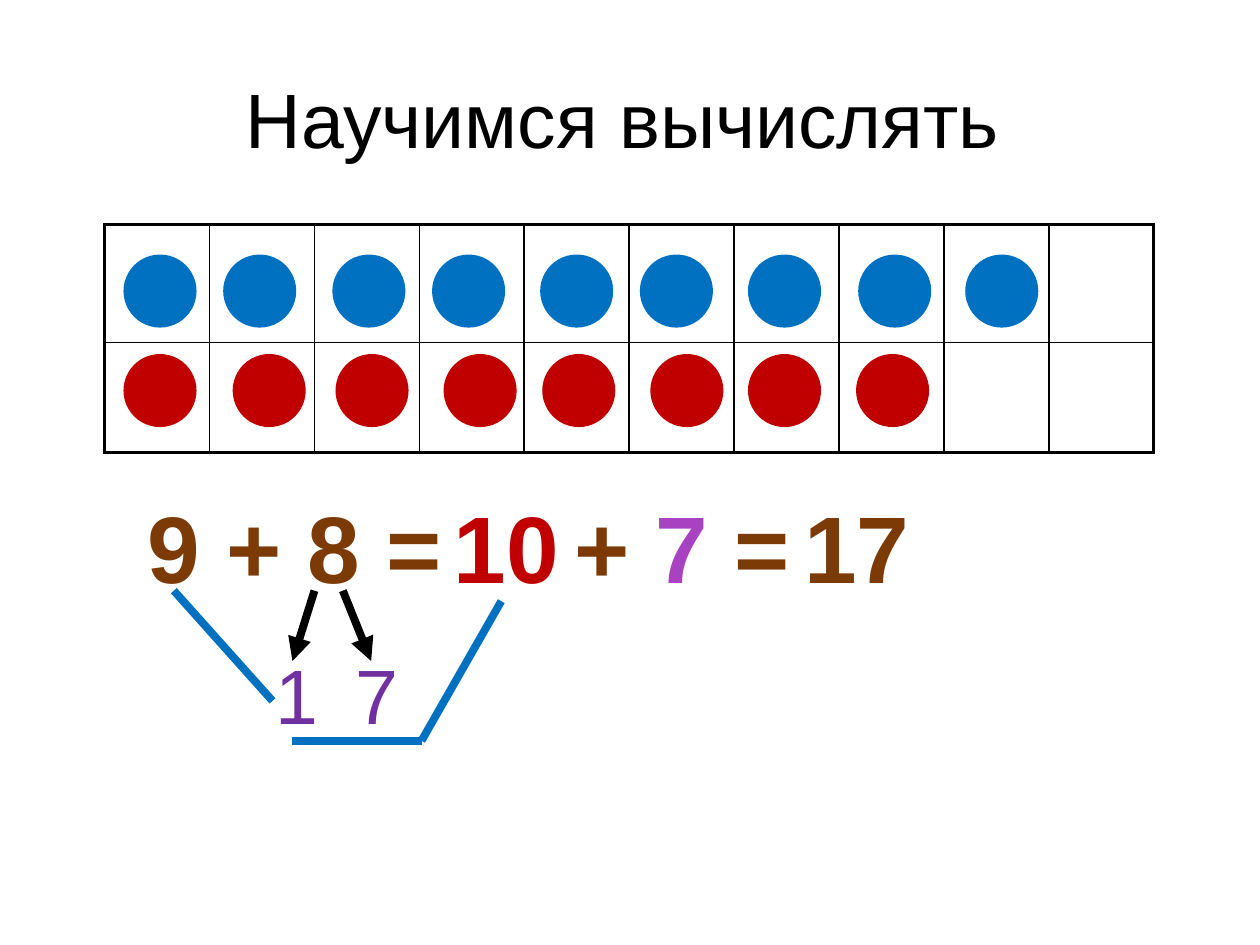
from lxml.etree import SubElement
from pptx import Presentation
from pptx.dml.color import RGBColor
from pptx.enum.shapes import MSO_CONNECTOR as CONN, MSO_SHAPE as SHAPE
from pptx.enum.text import MSO_ANCHOR as ANCHOR, PP_ALIGN as ALIGN
from pptx.oxml.ns import qn
from pptx.util import Inches, Pt

COLS = 10
BLACK, BLUE, RED = "000000", "0070C0", "C00000"
BROWN, VIOLET, PURPLE = "7C3B06", "A942C1", "7030A0"
BIG = {"name": "Arial", "size": Pt(54), "bold": True}
PLAIN = {"name": "Arial", "size": Pt(44), "bold": False}


def rgb(value):
    """Turn a hex string into a colour."""
    return RGBColor.from_string(value)


def write(sp, runs, fmt, align):
    """Put coloured runs into the first paragraph of a shape."""
    tf = sp.text_frame
    tf.vertical_anchor = ANCHOR.TOP
    p = tf.paragraphs[0]
    p.alignment = align
    for text, color in runs:
        r = p.add_run()
        r.text = text
        for key, value in fmt.items():
            setattr(r.font, key, value)
        r.font.color.rgb = rgb(color)


def add_line(s, start, end, color, arrow=False):
    """Draw a thick straight line, with an arrowhead at its end if asked."""
    sp = s.shapes.add_connector(CONN.STRAIGHT, *map(Inches, start + end))
    sp.line.color.rgb = rgb(color)
    sp.line.width = Pt(4.5)
    if arrow:
        SubElement(sp.line._get_or_add_ln(), qn("a:tailEnd"), type="triangle")
    SubElement(sp._element.spPr, qn("a:effectLst"))


def add_border(cell, side, width):
    """Give one side of a cell a black border."""
    ln = SubElement(cell._tc.get_or_add_tcPr(), qn(f"a:{side}"), w=str(Pt(width)))
    SubElement(SubElement(ln, qn("a:solidFill")), qn("a:srgbClr"), val=BLACK)


def add_title(s, box):
    """Place the slide title."""
    sp = s.shapes.title
    sp.left, sp.top, sp.width, sp.height = map(Inches, box)
    write(sp, [("Научимся вычислять", BLACK)], PLAIN, ALIGN.LEFT)


def add_frame(s, box, heights):
    """Draw the empty counting frame with a heavy outer border."""
    rows = len(heights)
    table = s.shapes.add_table(rows, COLS, *map(Inches, box)).table
    table.first_row = table.horz_banding = False
    for row, height in zip(table.rows, heights):
        row.height = Inches(height)
    for i in range(rows):
        for j in range(COLS):
            cell = table.cell(i, j)
            outer = {"lnL": j == 0, "lnR": j == COLS - 1,
                     "lnT": i == 0, "lnB": i == rows - 1}
            for side, heavy in outer.items():
                add_border(cell, side, 2.25 if heavy else 1)
            cell.fill.background()


def add_counters(s, box, columns, color):
    """Lay round counters along one row of the frame."""
    left, top, width, height = box
    unit = width / COLS
    for col in columns:
        sp = s.shapes.add_shape(SHAPE.OVAL, Inches(left + col * unit), Inches(top),
                                Inches(height), Inches(height))
        sp.shadow.inherit = False
        sp.fill.solid()
        sp.fill.fore_color.rgb = rgb(color)
        sp.line.fill.background()


def add_equation(s, box):
    """Write the sum and show how its second term is split."""
    left, top, width, _ = box
    unit = width / COLS

    def place(col, row):
        return left + col * unit, top + row * unit

    terms = [
        (0.28, 0, 3.07, 1.21, [("9 + 8 =", BROWN)], BIG, ALIGN.CENTER),
        (3.2, 0, 1.25, 1.21, [("10", RED)], BIG, ALIGN.CENTER),
        (4.34, 0, 2.32, 1.21, [("+ ", BROWN), ("7 ", VIOLET), ("=", BROWN)], BIG, ALIGN.CENTER),
        (6.54, 0, 1.25, 1.21, [("17", BROWN)], BIG, ALIGN.CENTER),
        (1.51, 1.51, 0.66, 1.01, [("1", PURPLE)], PLAIN, ALIGN.LEFT),
        (2.27, 1.51, 0.66, 1.01, [("7", PURPLE)], PLAIN, ALIGN.LEFT),
    ]
    for col, row, w, h, runs, fmt, align in terms:
        size = (w * unit, h * unit)
        sp = s.shapes.add_textbox(*map(Inches, place(col, row) + size))
        sp.text_frame.word_wrap = False
        write(sp, runs, fmt, align)

    lines = [
        ((2, 1.03), (1.79, 1.7), BLACK, True),
        ((2.27, 1.03), (2.54, 1.7), BLACK, True),
        ((0.66, 1.03), (1.6, 2.08), BLUE, False),
        ((1.79, 2.46), (3.02, 2.46), BLUE, False),
        ((3.02, 2.46), (3.78, 1.13), BLUE, False),
    ]
    for start, end, color, arrow in lines:
        add_line(s, place(*start), place(*end), color, arrow)


def main():
    """Build the slide and save it."""
    prs = Presentation()
    prs.slide_width, prs.slide_height = Inches(10), Inches(7.5)
    s = prs.slides.add_slide(prs.slide_layouts[5])
    left, width, dot = 0.83, 8.33, 0.58
    add_title(s, (1.85, 0.52, 6.8, 0.83))
    add_frame(s, (left, 1.78, width, 1.81), (0.94, 0.87))
    add_counters(s, (left, 2.02, width, dot),
                 (0.18, 1.13, 2.17, 3.12, 4.15, 5.1, 6.13, 7.18, 8.2), BLUE)
    add_counters(s, (left, 2.81, width, dot),
                 (0.18, 1.22, 2.2, 3.23, 4.17, 5.2, 6.13, 7.16), RED)
    add_equation(s, (left, 3.83, width, 2.1))
    prs.save("out.pptx")


if __name__ == "__main__":
    main()
